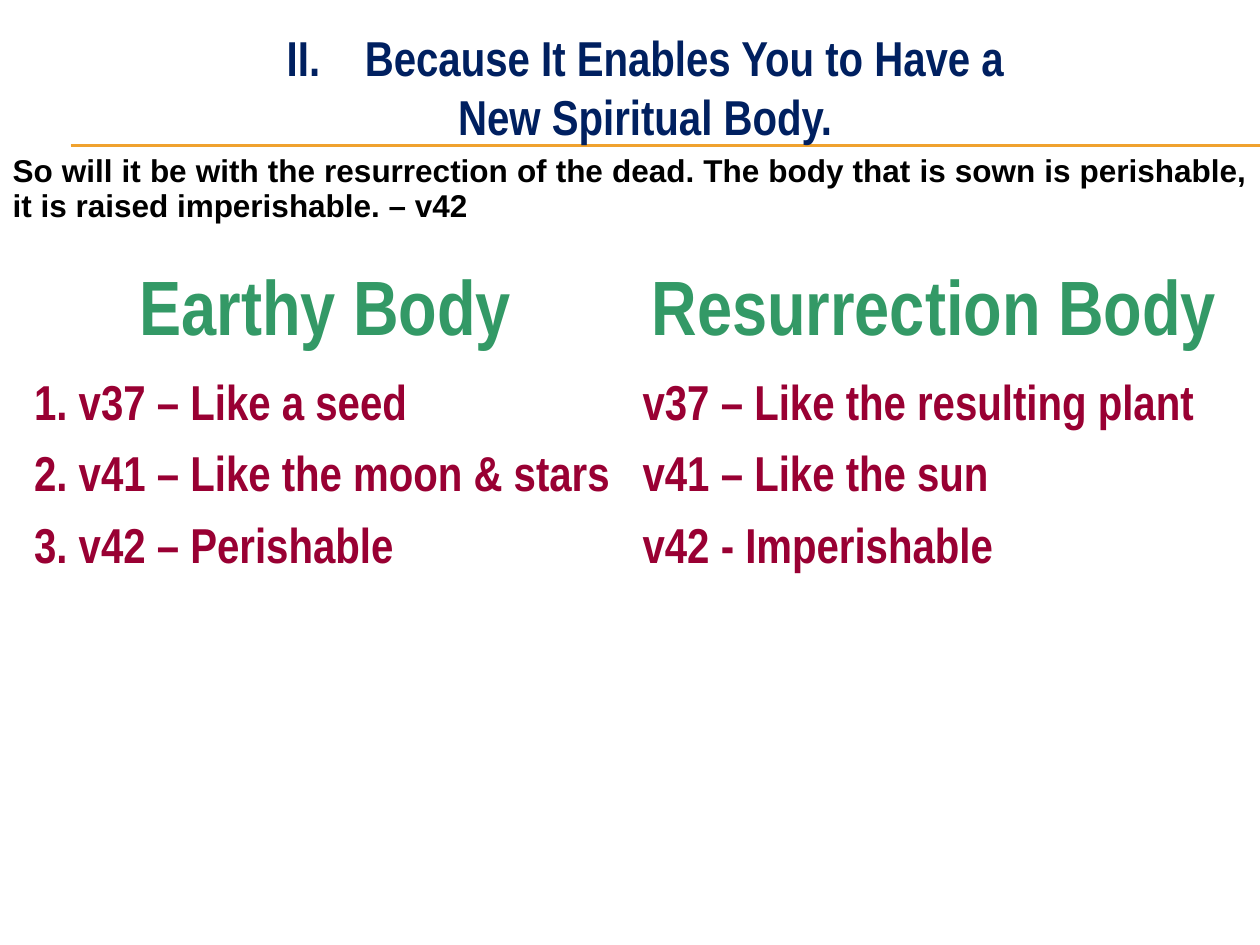
from lxml import etree
from pptx import Presentation
from pptx.dml.color import RGBColor
from pptx.enum.shapes import MSO_CONNECTOR
from pptx.enum.text import MSO_AUTO_SIZE, PP_ALIGN
from pptx.oxml.ns import qn
from pptx.util import Inches, Pt

STRAIGHT = MSO_CONNECTOR.STRAIGHT
GROW = MSO_AUTO_SIZE.SHAPE_TO_FIT_TEXT
LEFT, CENTER, JUSTIFY = PP_ALIGN.LEFT, PP_ALIGN.CENTER, PP_ALIGN.JUSTIFY

COLORS = {
    "title": "002060",
    "heading": "339966",
    "item": "990033",
    "verse": "000000",
    "rule": "F0A22E",
    "border": "FFFFFF",
}
VERSE = (
    "So will it be with the resurrection of the dead. The body that is sown "
    "is perishable, it is raised imperishable. – v42"
)
COMPARISON = [
    ("Earthy Body", "Resurrection Body"),
    ("1. v37 – Like a seed", "v37 – Like the resulting plant"),
    ("2. v41 – Like the moon & stars", "v41 – Like the sun"),
    ("3. v42 – Perishable", "v42 - Imperishable"),
]


class SlideBuilder:
    columns, rows = 100, 75
    narrow, wide = "Arial Narrow", "Arial"

    def __init__(self, presentation):
        self.width = presentation.slide_width
        self.height = presentation.slide_height
        self.slide = presentation.slides.add_slide(presentation.slide_layouts[6])

    def x(self, columns):
        return round(self.width * columns / self.columns)

    def y(self, rows):
        return round(self.height * rows / self.rows)

    def style(self, paragraph, color, size, font, alignment):
        paragraph.alignment = alignment
        paragraph.font.name = font
        paragraph.font.size = Pt(size)
        paragraph.font.bold = True
        paragraph.font.color.rgb = RGBColor.from_string(COLORS[color])

    def rule(self, left, right, top):
        line = self.slide.shapes.add_connector(
            STRAIGHT, self.x(left), self.y(top), self.x(right), self.y(top)
        )
        line.line.color.rgb = RGBColor.from_string(COLORS["rule"])
        line.line.width = Pt(0.75)
        etree.SubElement(line._element.spPr, qn("a:effectLst"))

    def title(self, left, top, width, height, lines, number):
        shape = self.slide.shapes.add_textbox(
            self.x(left), self.y(top), self.x(width), self.y(height)
        )
        frame = shape.text_frame
        frame.word_wrap = True
        frame.auto_size = GROW
        frame.text = "\n".join(lines)
        for index, paragraph in enumerate(frame.paragraphs):
            properties = paragraph._p.get_or_add_pPr()
            properties.set("marL", str(self.x(6.2)))
            properties.set("indent", str(-self.x(6.2)))
            if index == 0:
                etree.SubElement(properties, qn("a:buFont"), typeface=self.narrow)
                etree.SubElement(
                    properties, qn("a:buAutoNum"),
                    type="romanUcPeriod", startAt=str(number),
                )
            else:
                etree.SubElement(properties, qn("a:buNone"))
            self.style(paragraph, "title", 28, self.narrow, CENTER)

    def table(self, left, top, width, heights, texts, styles):
        table = self.slide.shapes.add_table(
            len(texts), len(texts[0]), self.x(left), self.y(top),
            self.x(width), self.y(sum(heights)),
        ).table
        table.first_row = False
        table.horz_banding = False
        for column in table.columns:
            column.width = self.x(width / len(texts[0]))
        for row, height in enumerate(heights):
            table.rows[row].height = self.y(height)
            for column, text in enumerate(texts[row]):
                cell = table.cell(row, column)
                cell.text = text
                self.border(cell)
                cell.fill.background()
                self.style(cell.text_frame.paragraphs[0], *styles[row])
        return table

    def border(self, cell, color=None):
        properties = cell._tc.get_or_add_tcPr()
        for edge in properties.findall("*"):
            properties.remove(edge)
        for side, points in (("L", 1), ("R", 1), ("T", 1), ("B", 3)):
            edge = etree.SubElement(
                properties, qn(f"a:ln{side}"), w=str(Pt(points))
            )
            if color:
                fill = etree.SubElement(edge, qn("a:solidFill"))
                etree.SubElement(fill, qn("a:srgbClr"), val=COLORS[color])
            else:
                etree.SubElement(edge, qn("a:noFill"))


def main():
    presentation = Presentation()
    presentation.slide_width = Inches(10)
    presentation.slide_height = Inches(7.5)
    builder = SlideBuilder(presentation)

    for top in (11.5, 11.6):
        builder.rule(5.6, 100, top)

    heading = ("heading", 44, builder.narrow, CENTER)
    item = ("item", 28, builder.narrow, LEFT)
    builder.table(
        1.7, 21.7, 96.6, [8.3] + [5.7] * 3, COMPARISON, [heading] + [item] * 3
    )
    builder.title(
        8.3, 1.7, 85.8, 10.4,
        ["Because It Enables You to Have a", "New Spiritual Body."], 2,
    )
    verse = builder.table(
        0, 11.7, 100, [7], [[VERSE]], [("verse", 18, builder.wide, JUSTIFY)]
    )
    verse_cell = verse.cell(0, 0)
    builder.border(verse_cell, "border")
    verse_cell.fill.background()

    presentation.save("out.pptx")


if __name__ == "__main__":
    main()
